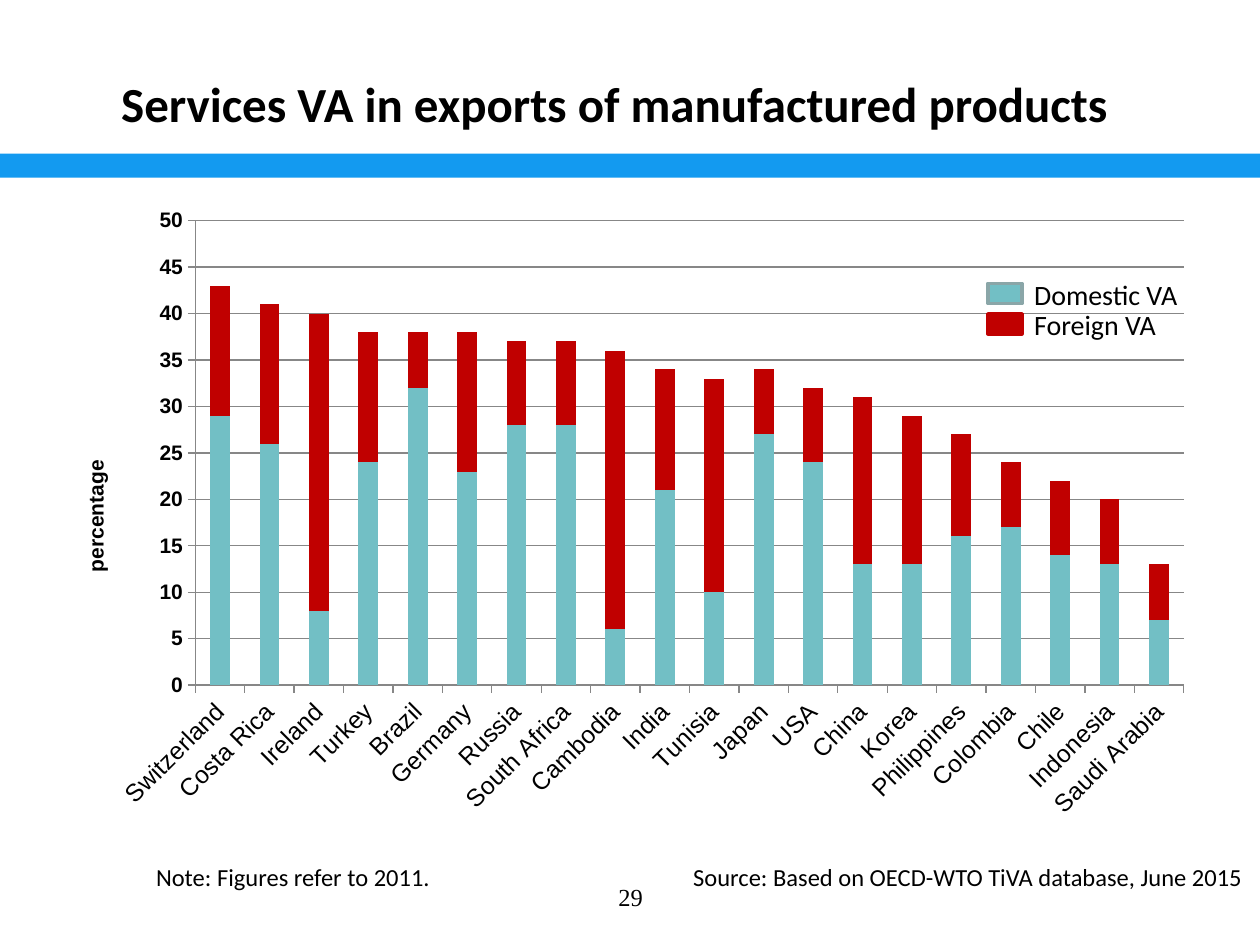
"""Build a slide with a stacked column chart of services value added in exports."""
from dataclasses import dataclass

from lxml import etree
from pptx import Presentation
from pptx.chart.data import CategoryChartData
from pptx.dml.color import RGBColor
from pptx.enum import chart as ch, shapes, text
from pptx.oxml import parse_xml
from pptx.oxml.ns import nsdecls, qn
from pptx.util import Inches, Pt


@dataclass(frozen=True)
class Theme:
    ink: RGBColor = RGBColor(0, 0, 0)
    bar: RGBColor = RGBColor(0x13, 0x9A, 0xF0)
    teal: RGBColor = RGBColor(0x72, 0xBF, 0xC5)
    teal_edge: RGBColor = RGBColor(0x8A, 0xA6, 0xA8)
    red: RGBColor = RGBColor(0xC0, 0, 0)
    grid: RGBColor = RGBColor(0x87, 0x87, 0x87)
    body: str = "Calibri"
    chart: str = "Arial"
    number: str = "Times New Roman"
    title_size: int = 28
    legend_size: int = 16
    small_size: int = 14
    axis_size: int = 12


@dataclass(frozen=True)
class Series:
    name: str
    values: tuple[int, ...]
    fill: RGBColor
    edge: RGBColor


@dataclass(frozen=True)
class Label:
    words: str
    left: float
    top: float
    width: float
    height: float
    align: text.PP_ALIGN = text.PP_ALIGN.LEFT
    font: str = Theme.body
    size: int = Theme.small_size


COUNTRIES = (
    "Switzerland", "Costa Rica", "Ireland", "Turkey", "Brazil", "Germany", "Russia",
    "South Africa", "Cambodia", "India", "Tunisia", "Japan", "USA", "China", "Korea",
    "Philippines", "Colombia", "Chile", "Indonesia", "Saudi Arabia",
)
SERIES = (
    Series("Domestic VA", (29, 26, 8, 24, 32, 23, 28, 28, 6, 21,
                           10, 27, 24, 13, 13, 16, 17, 14, 13, 7), Theme.teal, Theme.teal_edge),
    Series("Foreign VA", (14, 15, 32, 14, 6, 15, 9, 9, 30, 13,
                          23, 7, 8, 18, 16, 11, 7, 8, 7, 6), Theme.red, Theme.red),
)
LABELS = (
    Label("29", 3.42, 6.95, 3.17, 0.4, text.PP_ALIGN.CENTER, Theme.number),
    Label("Source: Based on OECD-WTO TiVA database, June 2015", 4.13, 6.79, 5.83, 0.34,
          text.PP_ALIGN.RIGHT),
    Label("Note: Figures refer to 2011.", 1.14, 6.79, 2.84, 0.34),
)


def style_font(font, name: str, size: int, bold: bool = False) -> None:
    font.name, font.size, font.bold = name, Pt(size), bold
    font.color.rgb = Theme.ink


def add_label(parent, label: Label) -> None:
    sp = parent.add_textbox(*map(Inches, (label.left, label.top, label.width, label.height)))
    tf = sp.text_frame
    tf.word_wrap = True
    p = tf.paragraphs[0]
    p.text, p.alignment = label.words, label.align
    style_font(p.font, label.font, label.size)


def add_box(parent, left: float, top: float, width: float, height: float, fill: RGBColor,
            edge: RGBColor | None = None) -> None:
    sp = parent.add_shape(shapes.MSO_SHAPE.RECTANGLE,
                          *map(Inches, (left, top, width, height)))
    sp.shadow.inherit = False
    sp.fill.solid()
    sp.fill.fore_color.rgb = fill
    if edge is None:
        sp.line.fill.background()
    else:
        sp.line.color.rgb, sp.line.width = edge, Pt(2)


def add_title(s, words: str) -> None:
    sp = s.shapes.title
    sp.left, sp.top, sp.width, sp.height = map(Inches, (0.5, 0.3, 8.75, 1.04))
    tf = sp.text_frame
    tf.vertical_anchor = text.MSO_ANCHOR.MIDDLE
    p = tf.paragraphs[0]
    p.text, p.alignment = words, text.PP_ALIGN.CENTER
    style_font(p.font, Theme.body, Theme.title_size, True)


def manual_layout(x: float, y: float, w: float | None = None,
                  h: float | None = None) -> etree._Element:
    sized = w is not None
    parts = [("layoutTarget", "inner")] if sized else []
    parts += [("xMode", "edge"), ("yMode", "edge"), ("x", x), ("y", y)]
    parts += [("w", w), ("h", h)] if sized else []
    body = "".join(f'<c:{tag} val="{val}"/>' for tag, val in parts)
    return parse_xml(f'<c:layout {nsdecls("c")}><c:manualLayout>{body}'
                     '</c:manualLayout></c:layout>')


def set_layout(parent, layout: etree._Element, index: int) -> None:
    for old in parent.findall(qn("c:layout")):
        parent.remove(old)
    parent.insert(index, layout)


def style_axis(axis, size: int, bold: bool = False) -> None:
    style_font(axis.tick_labels.font, Theme.chart, size, bold)
    axis.major_tick_mark = ch.XL_TICK_MARK.OUTSIDE
    axis.minor_tick_mark = ch.XL_TICK_MARK.NONE
    axis.format.line.color.rgb = Theme.grid


def add_stacked_chart(s) -> None:
    data = CategoryChartData(number_format="0")
    data.categories = COUNTRIES
    for series in SERIES:
        data.add_series(series.name, series.values)
    chart = s.shapes.add_chart(ch.XL_CHART_TYPE.COLUMN_STACKED,
                               *map(Inches, (0.35, 1.55, 9.23, 5.05)), data).chart
    style_font(chart.font, Theme.chart, 10)
    chart.has_legend = chart.has_title = False
    plot = chart.plots[0]
    plot.gap_width, plot.overlap, plot.vary_by_categories = 150, 100, False
    for drawn, series in zip(plot.series, SERIES):
        drawn.format.fill.solid()
        drawn.format.fill.fore_color.rgb = series.fill

    countries, percent = chart.category_axis, chart.value_axis
    style_axis(countries, Theme.small_size)
    style_axis(percent, Theme.axis_size, True)
    countries._element.find(qn("c:txPr")).find(qn("a:bodyPr")).set("rot", "-2700000")
    percent.minimum_scale, percent.maximum_scale, percent.major_unit = 0, 50, 5
    percent.tick_labels.number_format = "0"
    percent.tick_labels.number_format_is_linked = False
    percent.has_major_gridlines = True
    percent.major_gridlines.format.line.color.rgb = Theme.grid
    p = percent.axis_title.text_frame.paragraphs[0]
    p.text = "percentage"
    style_font(p.font, Theme.chart, Theme.axis_size, True)
    body = percent.axis_title.text_frame._txBody.find(qn("a:bodyPr"))
    body.set("rot", "-5400000")
    body.set("vert", "horz")
    set_layout(percent.axis_title._element, manual_layout(0.03, 0.41), 1)
    set_layout(chart._chartSpace.chart.plotArea, manual_layout(0.13, 0.04, 0.85, 0.73), 0)


def add_legend(s) -> None:
    group = s.shapes.add_group_shape().shapes
    for row, series in enumerate(SERIES):
        top = 2.15 + row * 0.24
        add_box(group, 7.84, top + 0.1, 0.27, 0.16, series.fill, series.edge)
        add_label(group, Label(series.name, 8.11, top, 1.46, 0.37, size=Theme.legend_size))


def main() -> None:
    prs = Presentation()
    prs.slide_width, prs.slide_height = Inches(10), Inches(7.5)
    s = prs.slides.add_slide(prs.slide_layouts[5])
    add_title(s, "Services VA in exports of manufactured products")
    add_box(s.shapes, 0, 1.22, 10, 0.19, Theme.bar)
    add_stacked_chart(s)
    add_legend(s)
    for label in LABELS:
        add_label(s.shapes, label)
    prs.save("out.pptx")


if __name__ == "__main__":
    main()
